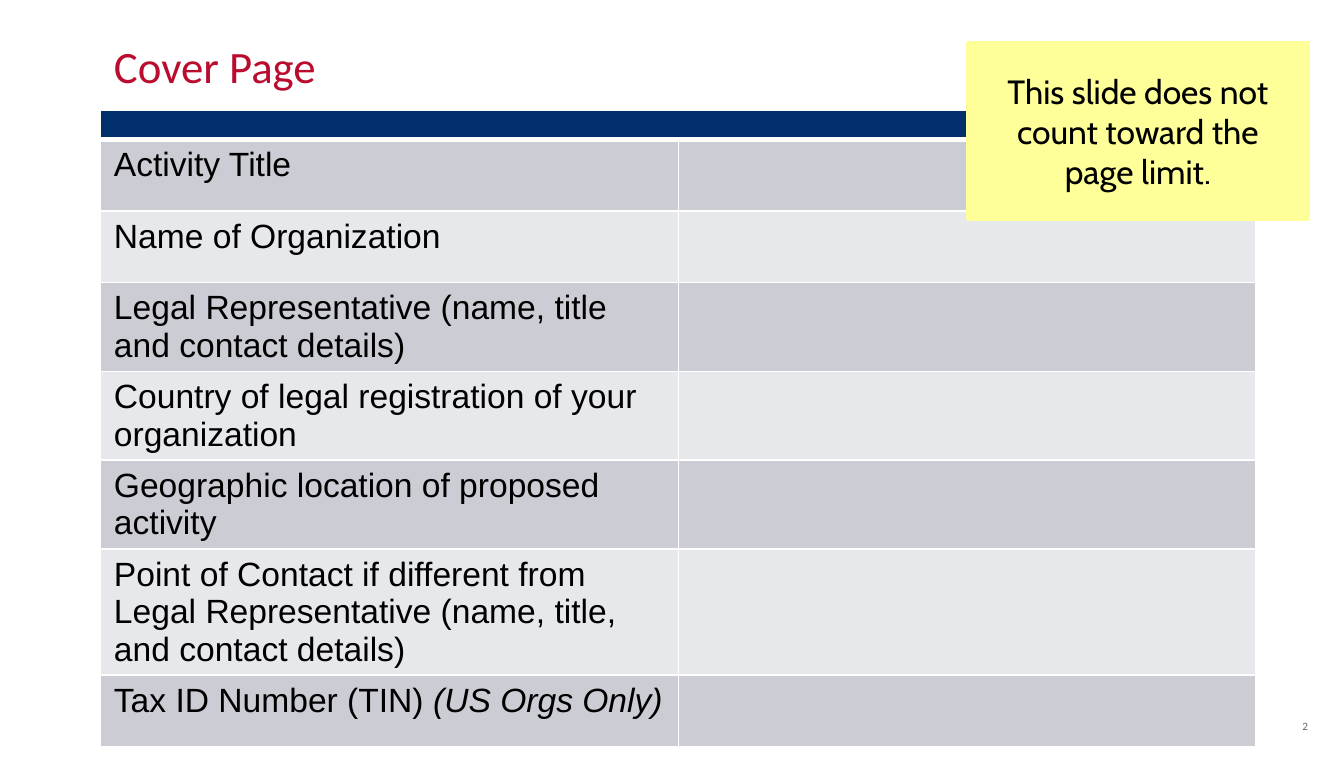
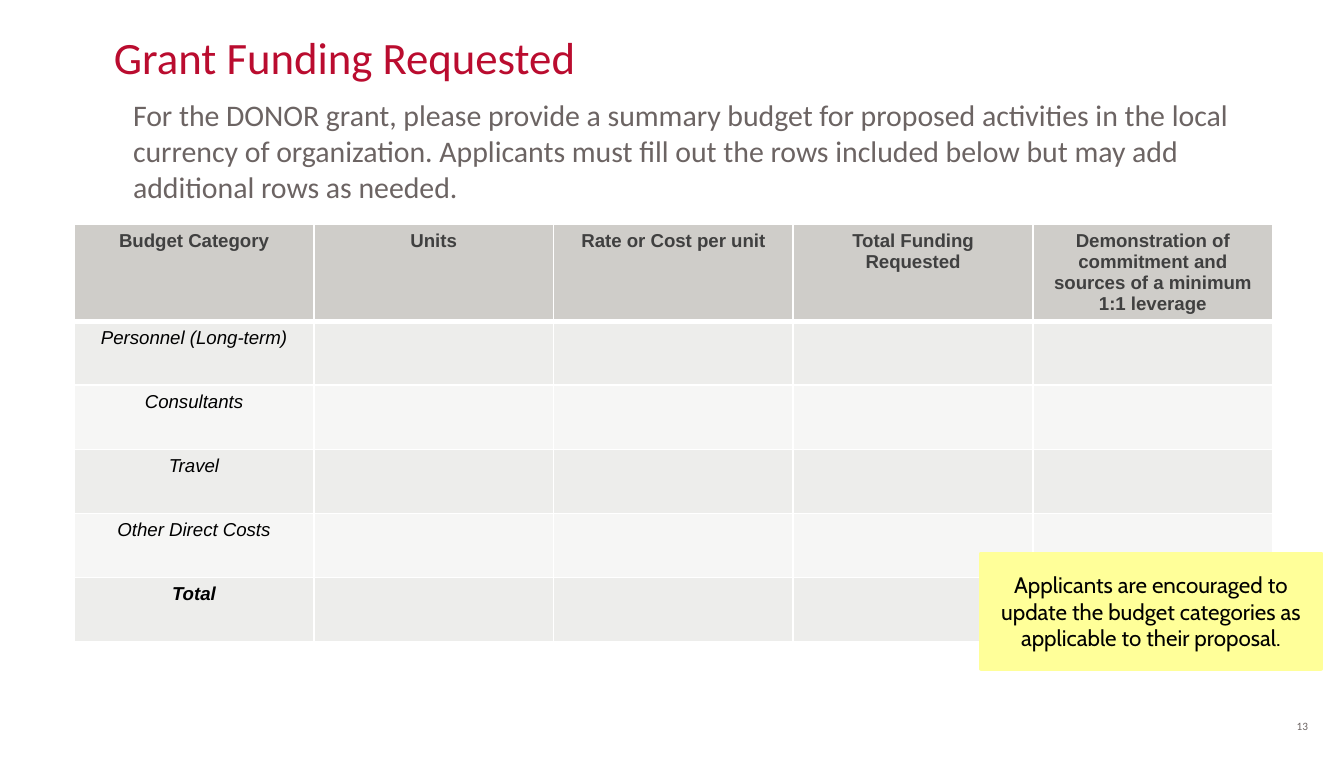
"""Build the cover page and grant funding slides of an application deck."""
from dataclasses import dataclass
from typing import Any

from lxml import etree
from pptx import Presentation
from pptx.dml.color import RGBColor
from pptx.enum import shapes, text
from pptx.oxml import ns
from pptx.util import Cm, Pt

RED = RGBColor(0xBA, 0x0C, 0x2F)
NAVY = RGBColor(0x00, 0x2F, 0x6C)
GRAY = RGBColor(0x6C, 0x64, 0x63)
DARK = RGBColor(0x40, 0x40, 0x40)
BLACK = RGBColor(0x00, 0x00, 0x00)
WHITE = RGBColor(0xFF, 0xFF, 0xFF)
YELLOW = RGBColor(0xFF, 0xFF, 0x99)
COVER_BANDS = (RGBColor(0xCC, 0xCD, 0xD4), RGBColor(0xE7, 0xE8, 0xEB))
BUDGET_HEAD = RGBColor(0xCF, 0xCD, 0xC9)
BUDGET_BANDS = (RGBColor(0xED, 0xED, 0xEB), RGBColor(0xF6, 0xF6, 0xF5))

LEFT, CENTER, RIGHT = text.PP_ALIGN.LEFT, text.PP_ALIGN.CENTER, text.PP_ALIGN.RIGHT
TOP, MIDDLE, BOTTOM = text.MSO_ANCHOR.TOP, text.MSO_ANCHOR.MIDDLE, text.MSO_ANCHOR.BOTTOM

TITLE_FORMAT = {"name": "Calibri", "size": Pt(24), "color": RED}
BODY_FORMAT = {"name": "Calibri", "size": Pt(16), "color": GRAY}
NUMBER_FORMAT = {"name": "Calibri", "size": Pt(6), "color": GRAY}
NOTE_FORMAT = {"name": "Cabin", "color": BLACK}
COVER_FORMAT = {"name": "Arial", "size": Pt(18), "color": BLACK}
BUDGET_FORMAT = {"name": "Arial", "size": Pt(10), "color": BLACK, "italic": True}
HEAD_FORMAT = {"name": "Arial", "size": Pt(10), "color": DARK, "bold": True}


@dataclass(frozen=True)
class Frame:
    """Position and size of an object."""

    left: Cm
    top: Cm
    width: Cm
    height: Cm


@dataclass(frozen=True)
class Span:
    """A piece of text with its font format."""

    words: str
    format: dict[str, Any]


@dataclass(frozen=True)
class TableRow:
    """A table row whose cells are tuples of spans."""

    height: Cm
    fill: RGBColor
    cells: tuple[tuple[Span, ...], ...] = ()
    is_head: bool = False


@dataclass(frozen=True)
class Note:
    """A yellow remark laid over a slide."""

    frame: Frame
    words: str
    size: Pt


COVER_FIELDS = (
    ("Activity Title", Cm(1.35)),
    ("Name of Organization", Cm(1.35)),
    ("Legal Representative (name, title and contact details)", Cm(1.6)),
    ("Country of legal registration of your organization", Cm(1.6)),
    ("Geographic location of proposed activity", Cm(1.6)),
    ("Point of Contact if different from Legal Representative "
     "(name, title, and contact details)", Cm(2.26)),
    ("Tax ID Number (TIN) ", Cm(1.35)),
)
BUDGET_COLUMNS = (
    "Budget Category", "Units", "Rate or Cost per unit", "Total Funding Requested",
    "Demonstration of commitment and sources of a minimum 1:1 leverage",
)
BUDGET_CATEGORIES = (
    "Personnel (Long-term)", "Consultants", "Travel", "Other Direct Costs", "Total",
)
BUDGET_INTRO = (
    "For the DONOR grant, please provide a summary budget for proposed activities "
    "in the local currency of organization. Applicants must fill out the rows "
    "included below but may add additional rows as needed."
)
COVER_NOTE = Note(Frame(Cm(18.29), Cm(0.81), Cm(6.43), Cm(3.33)),
                  "This slide does not count toward the page limit.", Pt(18))
BUDGET_NOTE = Note(Frame(Cm(18.54), Cm(10.46), Cm(6.43), Cm(2.18)),
                   "Applicants are encouraged to update the budget categories as "
                   "applicable to their proposal.", Pt(12))
NUMBER_FRAME = Frame(Cm(19.05), Cm(13.46), Cm(5.92), Cm(0.51))


def place(item: Any, frame: Frame) -> None:
    """Move an object to its frame."""
    for name in ("left", "top", "width", "height"):
        setattr(item, name, getattr(frame, name))


def write(para: Any, spans: tuple[Span, ...], align: Any) -> None:
    """Fill a paragraph with formatted spans."""
    para.alignment = align
    para.space_before = Pt(0)
    for span in spans:
        run = para.add_run()
        run.text = span.words
        for name, value in span.format.items():
            if name == "color":
                run.font.color.rgb = value
            else:
                setattr(run.font, name, value)


def fill_box(box: Any, span: Span, align: Any, anchor: Any) -> Any:
    """Write one paragraph into a shape and return the paragraph."""
    frame = box.text_frame
    settings = {"word_wrap": True, "auto_size": text.MSO_AUTO_SIZE.NONE,
                "vertical_anchor": anchor}
    for name, value in settings.items():
        setattr(frame, name, value)
    write(frame.paragraphs[0], (span,), align)
    return frame.paragraphs[0]


def add_page(deck: Any, layout: int, title: str, top: Cm, number: str) -> Any:
    """Add a slide with the shared title style and page number."""
    page = deck.slides.add_slide(deck.slide_layouts[layout])
    place(page.shapes.title, Frame(Cm(1.9), top, Cm(21.59), Cm(1.27)))
    fill_box(page.shapes.title, Span(title, TITLE_FORMAT), LEFT, BOTTOM)
    frame = NUMBER_FRAME
    box = page.shapes.add_textbox(frame.left, frame.top, frame.width, frame.height)
    fill_box(box, Span(number, NUMBER_FORMAT), RIGHT, MIDDLE)
    return page


def add_intro(page: Any, words: str) -> None:
    """Set the body placeholder as an unbulleted, indented paragraph."""
    body = page.placeholders[1]
    place(body, Frame(Cm(1.9), Cm(1.7), Cm(21.59), Cm(8.89)))
    para = fill_box(body, Span(words, BODY_FORMAT), LEFT, TOP)
    properties = para._p.get_or_add_pPr()
    properties.set("marL", str(Cm(0.36)))
    properties.set("indent", "0")
    etree.SubElement(properties, ns.qn("a:buNone"))


def add_note(page: Any, note: Note) -> None:
    """Draw a yellow note."""
    frame = note.frame
    box = page.shapes.add_shape(shapes.MSO_SHAPE.RECTANGLE, frame.left, frame.top,
                                frame.width, frame.height)
    box.shadow.inherit = False
    box.fill.solid()
    box.fill.fore_color.rgb = YELLOW
    box.line.color.rgb = YELLOW
    box.line.width = Pt(2)
    fill_box(box, Span(note.words, NOTE_FORMAT | {"size": note.size}), CENTER, MIDDLE)


def set_borders(cell: Any, bottom: Pt) -> None:
    """Give a cell white edges, with its own bottom weight."""
    properties = cell._tc.get_or_add_tcPr()
    widths = {"lnL": Pt(1), "lnR": Pt(1), "lnT": Pt(1), "lnB": bottom}
    for index, (tag, width) in enumerate(widths.items()):
        line = etree.Element(ns.qn(f"a:{tag}"), w=str(width))
        fill = etree.SubElement(line, ns.qn("a:solidFill"))
        etree.SubElement(fill, ns.qn("a:srgbClr"), val=str(WHITE))
        properties.insert(index, line)


def add_grid(page: Any, left: Cm, top: Cm, column: Cm, count: int,
             rows: list[TableRow], align: Any) -> Any:
    """Draw a table of equal columns and return it."""
    height = sum(row.height for row in rows)
    table = page.shapes.add_table(len(rows), count, left, top, column * count, height).table
    for item in table.columns:
        item.width = column
    for index, row in enumerate(rows):
        table.rows[index].height = row.height
        for position, cell in enumerate(table.rows[index].cells):
            cell.fill.solid()
            cell.fill.fore_color.rgb = row.fill
            set_borders(cell, Pt(3 if row.is_head else 1))
            para = cell.text_frame.paragraphs[0]
            if position < len(row.cells):
                write(para, row.cells[position], align)
            else:
                etree.SubElement(para._p, ns.qn("a:endParaRPr"), sz="600")
    return table


def build_cover(deck: Any) -> None:
    """Build the cover page form."""
    page = add_page(deck, 5, "Cover Page", Cm(0.61), "2")
    rows = [TableRow(Cm(0.56), NAVY, is_head=True)]
    for index, (label, height) in enumerate(COVER_FIELDS):
        spans = (Span(label, COVER_FORMAT),)
        if label.startswith("Tax ID"):
            spans += (Span("(US Orgs Only)", COVER_FORMAT | {"italic": True}),)
        rows.append(TableRow(height, COVER_BANDS[index % 2], (spans,)))
    table = add_grid(page, Cm(1.9), Cm(2.08), Cm(10.92), 2, rows, LEFT)
    table.cell(0, 0).merge(table.cell(0, 1))
    add_note(page, COVER_NOTE)


def build_budget(deck: Any) -> None:
    """Build the grant funding table."""
    page = add_page(deck, 1, "Grant Funding Requested", Cm(0.43), "13")
    add_intro(page, BUDGET_INTRO)
    heads = tuple((Span(words, HEAD_FORMAT),) for words in BUDGET_COLUMNS)
    rows = [TableRow(Cm(1.27), BUDGET_HEAD, heads, is_head=True)]
    for index, words in enumerate(BUDGET_CATEGORIES):
        span = Span(words, BUDGET_FORMAT | {"bold": words == "Total"})
        rows.append(TableRow(Cm(1.21), BUDGET_BANDS[index % 2], ((span,),)))
    add_grid(page, Cm(1.4), Cm(4.24), Cm(4.53), len(BUDGET_COLUMNS), rows, CENTER)
    add_note(page, BUDGET_NOTE)


def main() -> None:
    """Create and save the deck."""
    deck = Presentation()
    deck.slide_width, deck.slide_height = Cm(25.4), Cm(14.4)
    build_cover(deck)
    build_budget(deck)
    deck.save("out.pptx")


if __name__ == "__main__":
    main()
